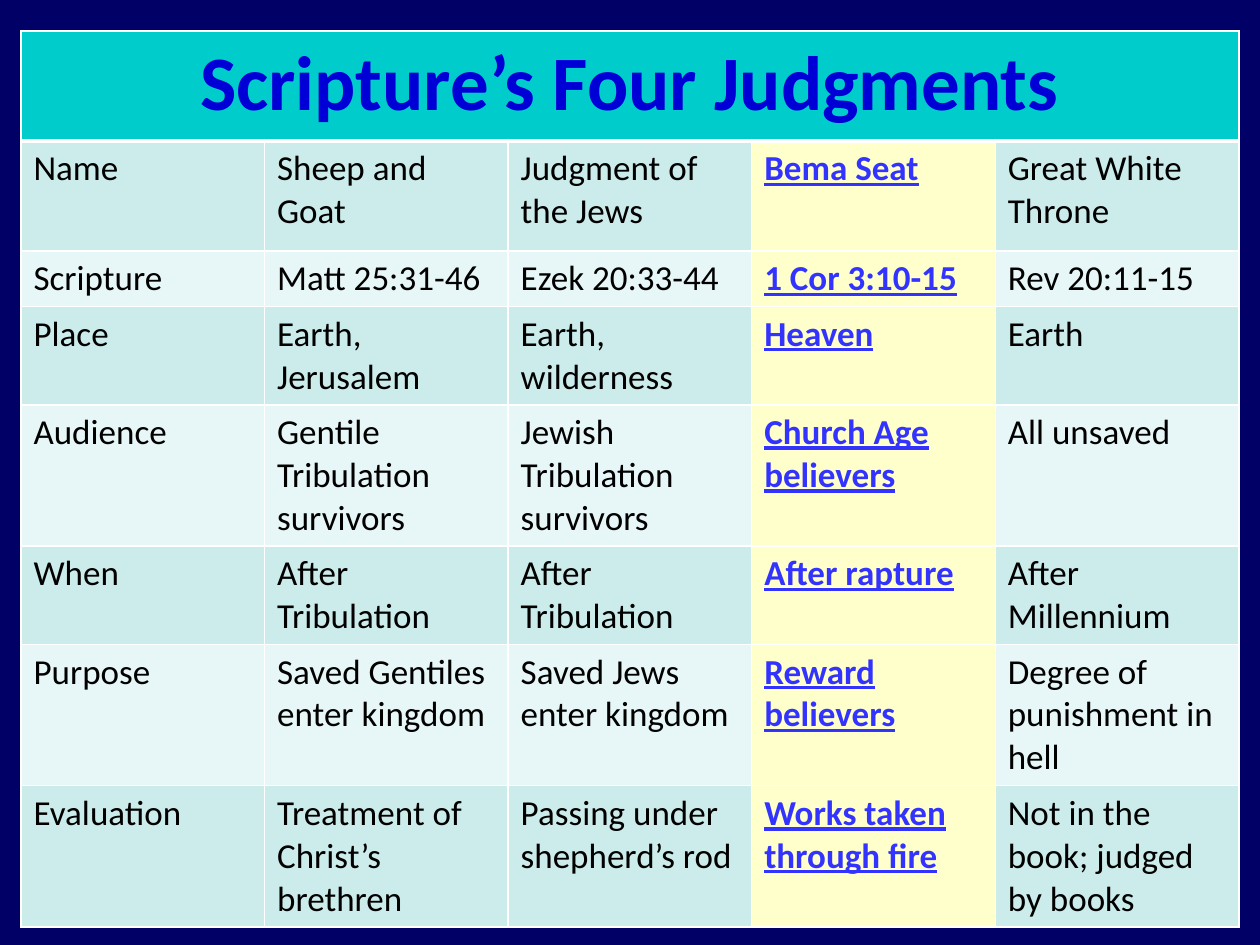
from dataclasses import dataclass

from lxml.etree import SubElement
from pptx import Presentation
from pptx.dml.color import RGBColor as Rgb
from pptx.enum.text import PP_ALIGN as Align
from pptx.oxml.ns import qn
from pptx.util import Emu, Pt

EMU_PER_PX = 914400 // 126


@dataclass(frozen=True)
class Theme:
    font: str = "Calibri"
    title_size: int = 44
    body_size: int = 20
    background: str = "000066"
    title_fill: str = "00CCCC"
    title_text: str = "0000D6"
    bands: tuple = ("CCECEC", "E7F6F6")
    body_text: str = "000000"
    highlight_fill: str = "FFFFCC"
    highlight_text: str = "3333FF"
    border: str = "FFFFFF"
    thin_line: int = 1
    thick_line: int = 3


THEME = Theme()
TITLE = "Scripture’s Four Judgments"
HIGHLIGHT_COLUMN = 3
ROW_HEIGHTS = (110, 110, 52, 89, 127, 89, 127, 127)
JUDGMENTS = (
    ("Name", "Sheep and Goat", "Judgment of the Jews", "Bema Seat",
     "Great White Throne"),
    ("Scripture", "Matt 25:31-46", "Ezek 20:33-44", "1 Cor 3:10-15",
     "Rev 20:11-15"),
    ("Place", "Earth, Jerusalem", "Earth, wilderness", "Heaven", "Earth"),
    ("Audience", "Gentile Tribulation survivors",
     "Jewish Tribulation survivors", "Church Age believers", "All unsaved"),
    ("When", "After Tribulation", "After Tribulation", "After rapture",
     "After Millennium"),
    ("Purpose", "Saved Gentiles enter kingdom", "Saved Jews enter kingdom",
     "Reward believers", "Degree of punishment in hell"),
    ("Evaluation", "Treatment of Christ’s brethren",
     "Passing under shepherd’s rod", "Works taken through fire",
     "Not in the book; judged by books"),
)


def px(length):
    return Emu(length * EMU_PER_PX)


def set_fill(fill, color):
    fill.solid()
    fill.fore_color.rgb = Rgb.from_string(color)


def set_borders(cell, top, bottom):
    """Draw all four borders; must run before the cell is filled."""
    properties = cell._tc.get_or_add_tcPr()
    widths = {"L": THEME.thin_line, "R": THEME.thin_line, "T": top, "B": bottom}
    for side, width in widths.items():
        line = SubElement(properties, qn(f"a:ln{side}"), w=str(Pt(width)))
        solid = SubElement(line, qn("a:solidFill"))
        SubElement(solid, qn("a:srgbClr"), val=THEME.border)


def write_text(cell, text, color, align=Align.LEFT, **font_format):
    paragraph = cell.text_frame.paragraphs[0]
    paragraph.alignment = align
    run = paragraph.add_run()
    run.text = text
    run.font.color.rgb = Rgb.from_string(color)
    for name, value in {"name": THEME.font, **font_format}.items():
        setattr(run.font, name, value)


def add_judgment_table(slide):
    column_count = len(JUDGMENTS[0])
    frame = slide.shapes.add_table(
        len(ROW_HEIGHTS), column_count, px(21), px(31), px(1218), px(883))
    table = frame.table
    table.first_row = table.horz_banding = False
    for row, height in zip(table.rows, ROW_HEIGHTS):
        row.height = px(height)
    frame.height = px(883)
    table.cell(0, 0).merge(table.cell(0, column_count - 1))
    return table


def fill_title_row(table):
    for cell in table.rows[0].cells:
        set_borders(cell, THEME.thin_line, THEME.thick_line)
        set_fill(cell.fill, THEME.title_fill)
    write_text(table.cell(0, 0), TITLE, THEME.title_text, Align.CENTER,
               size=Pt(THEME.title_size), bold=True)


def fill_body_rows(table):
    for row, texts in enumerate(JUDGMENTS, start=1):
        top = THEME.thick_line if row == 1 else THEME.thin_line
        band = THEME.bands[(row - 1) % 2]
        for column, text in enumerate(texts):
            cell = table.cell(row, column)
            highlighted = column == HIGHLIGHT_COLUMN
            set_borders(cell, top, THEME.thin_line)
            set_fill(cell.fill, THEME.highlight_fill if highlighted else band)
            write_text(
                cell, text,
                THEME.highlight_text if highlighted else THEME.body_text,
                size=Pt(THEME.body_size), bold=highlighted,
                underline=highlighted)


def main():
    presentation = Presentation()
    presentation.slide_width, presentation.slide_height = px(1260), px(945)
    slide = presentation.slides.add_slide(presentation.slide_layouts[6])
    set_fill(slide.background.fill, THEME.background)
    table = add_judgment_table(slide)
    fill_title_row(table)
    fill_body_rows(table)
    presentation.save("out.pptx")


if __name__ == "__main__":
    main()
